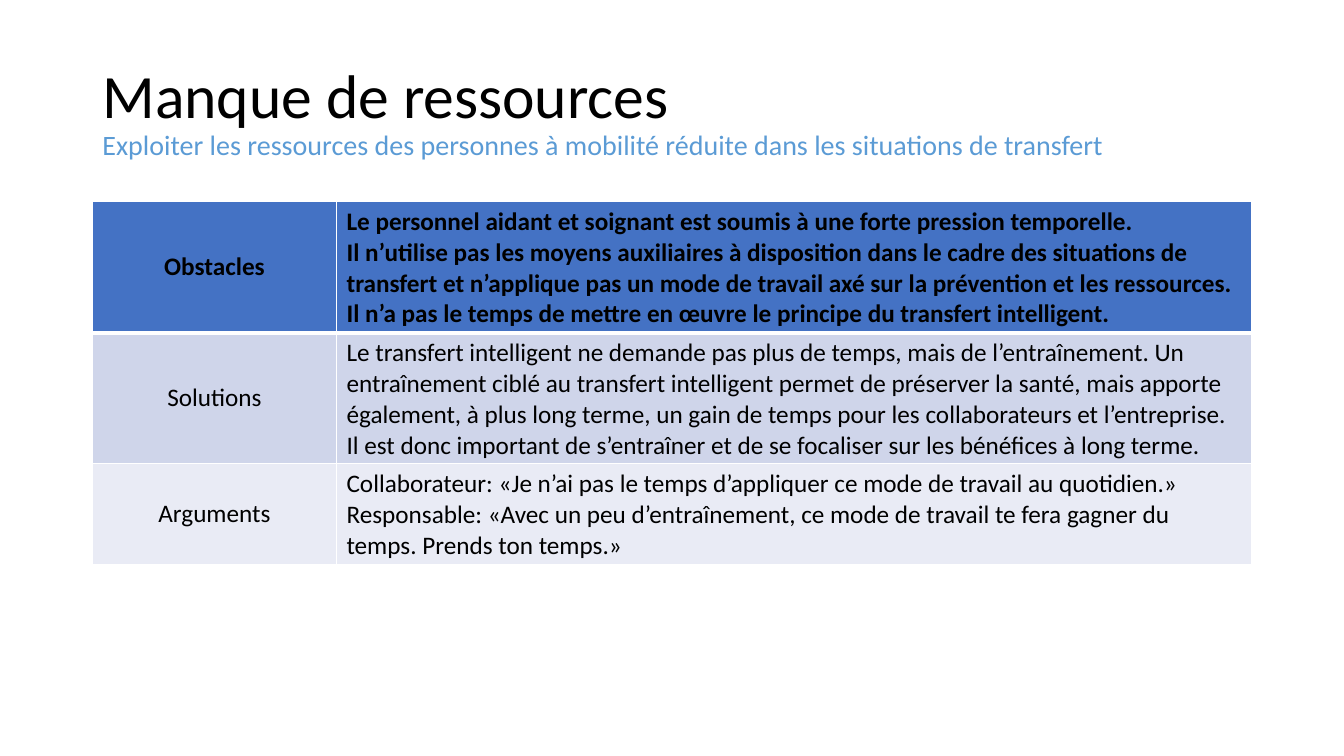
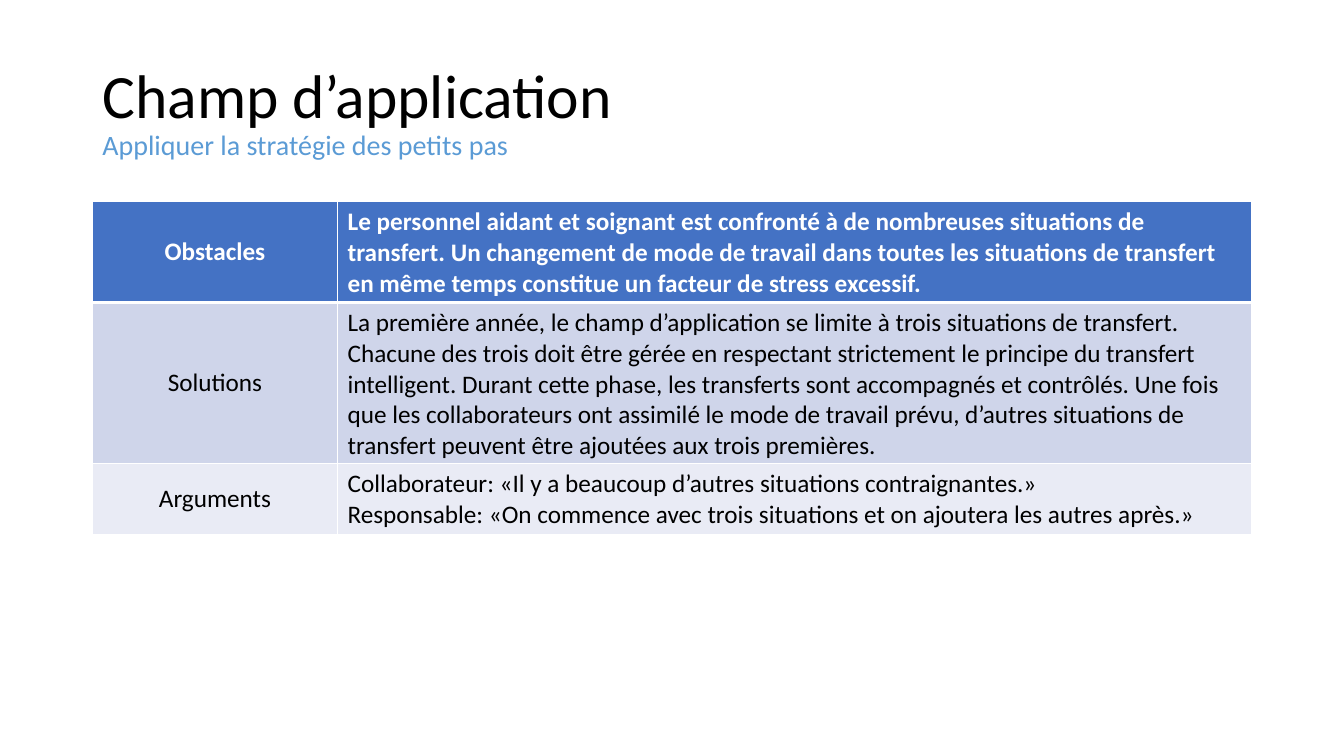
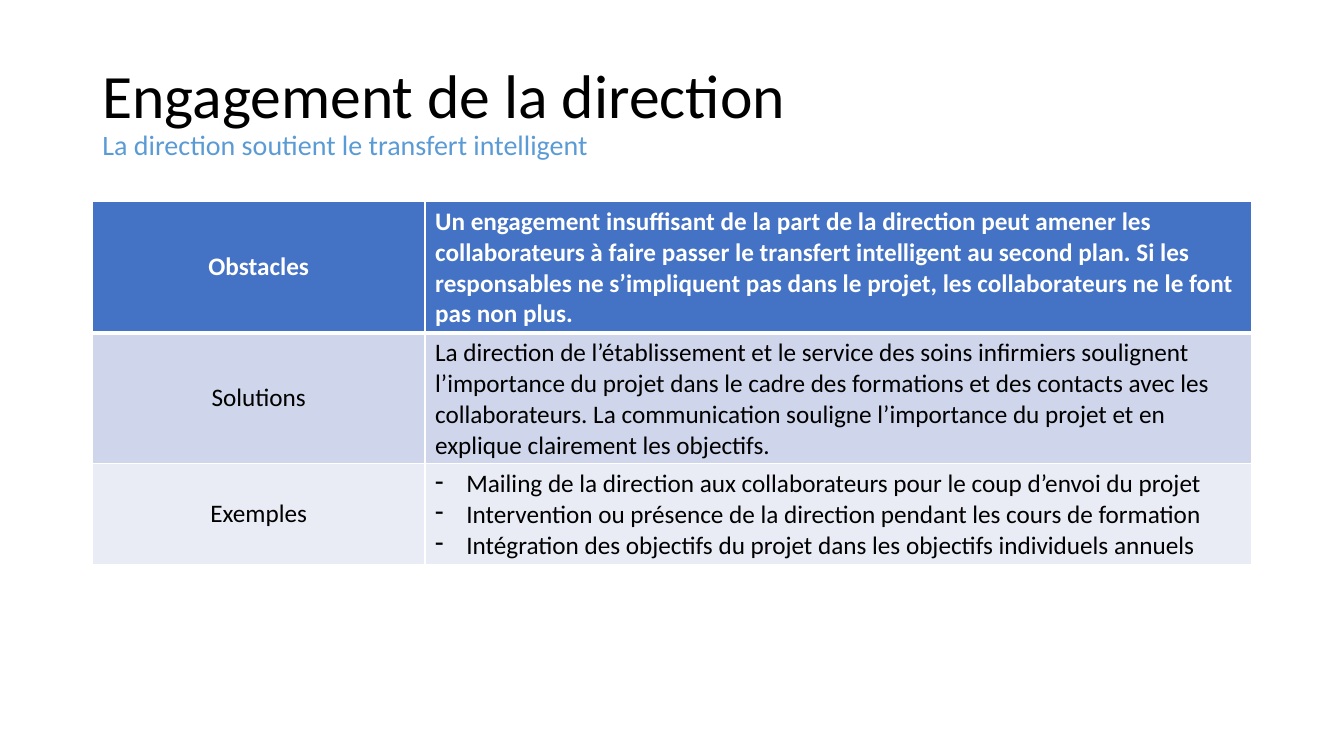
from dataclasses import dataclass

import pptx
import pptx.dml.color
import pptx.enum.text
import pptx.oxml
import pptx.oxml.ns
import pptx.slide
import pptx.table
import pptx.text.text
import pptx.util

RGBColor = pptx.dml.color.RGBColor
BLACK = RGBColor(0x00, 0x00, 0x00)
WHITE = RGBColor(0xFF, 0xFF, 0xFF)
SUBTITLE_BLUE = RGBColor(0x5B, 0x9B, 0xD5)
ROW_FILLS = (
    RGBColor(0x44, 0x72, 0xC4),
    RGBColor(0xCF, 0xD5, 0xEA),
    RGBColor(0xE9, 0xEB, 0xF5),
)
FONT = "Calibri"

SLIDE_WIDTH = pptx.util.Inches(13.33)
SLIDE_HEIGHT = pptx.util.Inches(7.5)

# Percentages of the slide's width or height
CONTENT_LEFT = 6.88
CONTENT_WIDTH = 86.25
TITLE_TOP = 5.33
TITLE_HEIGHT = 19.33
TABLE_TOP = 26.67
ROW_HEIGHT = 5.47

THIN, THICK = pptx.util.Pt(1), pptx.util.Pt(3)
BULLET_INDENT = pptx.util.Inches(0.31)


@dataclass(frozen=True)
class Row:
    label: str
    paragraphs: tuple[str, ...]
    bulleted: bool = False


@dataclass(frozen=True)
class Topic:
    title: str
    subtitle: str
    label_width: float
    rows: tuple[Row, ...]
    header_color: RGBColor = WHITE


TOPICS = (
    Topic(
        "Manque de ressources",
        "Exploiter les ressources des personnes à mobilité réduite dans les situations de transfert",
        18.16,
        (
            Row("Obstacles", (
                "Le personnel aidant et soignant est soumis à une forte pression temporelle.\n"
                "Il n’utilise pas les moyens auxiliaires à disposition dans le cadre des situations de "
                "transfert et n’applique pas un mode de travail axé sur la prévention et les ressources.",
                "Il n’a pas le temps de mettre en œuvre le principe du transfert intelligent.",
            )),
            Row("Solutions", (
                "Le transfert intelligent ne demande pas plus de temps, mais de l’entraînement. Un "
                "entraînement ciblé au transfert intelligent permet de préserver la santé, mais apporte "
                "également, à plus long terme, un gain de temps pour les collaborateurs et l’entreprise.",
                "Il est donc important de s’entraîner et de se focaliser sur les bénéfices à long terme.",
            )),
            Row("Arguments", (
                "Collaborateur: «Je n’ai pas le temps d’appliquer ce mode de travail au quotidien.»",
                "Responsable: «Avec un peu d’entraînement, ce mode de travail te fera gagner du "
                "temps. Prends ton temps.»",
            )),
        ),
        header_color=BLACK,
    ),
    Topic(
        "Champ d’application",
        "Appliquer la stratégie des petits pas",
        18.24,
        (
            Row("Obstacles", (
                "Le personnel aidant et soignant est confronté à de nombreuses situations de "
                "transfert. Un changement de mode de travail dans toutes les situations de transfert "
                "en même temps constitue un facteur de stress excessif.",
            )),
            Row("Solutions", (
                "La première année, le champ d’application se limite à trois situations de transfert. "
                "Chacune des trois doit être gérée en respectant strictement le principe du transfert "
                "intelligent. Durant cette phase, les transferts sont accompagnés et contrôlés. Une fois "
                "que les collaborateurs ont assimilé le mode de travail prévu, d’autres situations de "
                "transfert peuvent être ajoutées aux trois premières.",
            )),
            Row("Arguments", (
                "Collaborateur: «Il y a beaucoup d’autres situations contraignantes.»",
                "Responsable: «On commence avec trois situations et on ajoutera les autres après.»",
            )),
        ),
    ),
    Topic(
        "Engagement de la direction",
        "La direction soutient le transfert intelligent",
        24.75,
        (
            Row("Obstacles", (
                "Un engagement insuffisant de la part de la direction peut amener les "
                "collaborateurs à faire passer le transfert intelligent au second plan. Si les "
                "responsables ne s’impliquent pas dans le projet, les collaborateurs ne le font "
                "pas non plus.",
            )),
            Row("Solutions", (
                "La direction de l’établissement et le service des soins infirmiers soulignent "
                "l’importance du projet dans le cadre des formations et des contacts avec les "
                "collaborateurs. La communication souligne l’importance du projet et en "
                "explique clairement les objectifs.",
            )),
            Row("Exemples", (
                "Mailing de la direction aux collaborateurs pour le coup d’envoi du projet",
                "Intervention ou présence de la direction pendant les cours de formation",
                "Intégration des objectifs du projet dans les objectifs individuels annuels",
            ), bulleted=True),
        ),
    ),
)


def across(percent: float) -> int:
    return round(SLIDE_WIDTH * percent / 100)


def down(percent: float) -> int:
    return round(SLIDE_HEIGHT * percent / 100)


def add_title(slide: pptx.slide.Slide, topic: Topic) -> None:
    frame = slide.shapes.add_textbox(
        across(CONTENT_LEFT), down(TITLE_TOP), across(CONTENT_WIDTH), down(TITLE_HEIGHT)
    ).text_frame
    frame.word_wrap = True
    frame.vertical_anchor = pptx.enum.text.MSO_ANCHOR.MIDDLE
    heading = frame.paragraphs[0]
    heading.line_spacing = 0.9
    heading.font.name = FONT
    for text, size, color in ((topic.title, 44, BLACK), (topic.subtitle, 20, SUBTITLE_BLUE)):
        if heading.runs:
            heading.add_line_break()
        run = heading.add_run()
        run.text = text
        run.font.size = pptx.util.Pt(size)
        run.font.color.rgb = color


def set_borders(cell: pptx.table._Cell, top: int, bottom: int) -> None:
    properties = cell._tc.get_or_add_tcPr()
    for side, width in (("L", THIN), ("R", THIN), ("T", top), ("B", bottom)):
        properties.append(pptx.oxml.parse_xml(
            f'<a:ln{side} {pptx.oxml.ns.nsdecls("a")} w="{int(width)}">'
            f'<a:solidFill><a:srgbClr val="{WHITE}"/></a:solidFill></a:ln{side}>'
        ))


def add_bullet(paragraph: pptx.text.text._Paragraph) -> None:
    properties = paragraph._p.get_or_add_pPr()
    properties.set("marL", str(int(BULLET_INDENT)))
    properties.set("indent", str(-int(BULLET_INDENT)))
    properties.insert(0, pptx.oxml.parse_xml(
        f'<a:buChar {pptx.oxml.ns.nsdecls("a")} char="-"/>'
    ))


def write_cell(cell: pptx.table._Cell, texts: tuple[str, ...], color: RGBColor, bold: bool) -> None:
    cell.vertical_anchor = pptx.enum.text.MSO_ANCHOR.MIDDLE
    frame = cell.text_frame
    for index, text in enumerate(texts):
        paragraph = frame.add_paragraph() if index else frame.paragraphs[0]
        paragraph.text = text
        paragraph.font.name = FONT
        paragraph.font.size = pptx.util.Pt(18)
        paragraph.font.bold = bold
        paragraph.font.color.rgb = color


def add_topic_table(slide: pptx.slide.Slide, topic: Topic) -> None:
    table = slide.shapes.add_table(
        len(topic.rows), 2, across(CONTENT_LEFT), down(TABLE_TOP),
        across(CONTENT_WIDTH), down(ROW_HEIGHT * len(topic.rows)),
    ).table
    table.columns[0].width = across(topic.label_width)
    table.columns[1].width = across(CONTENT_WIDTH - topic.label_width)
    for index, (row, fill) in enumerate(zip(topic.rows, ROW_FILLS)):
        is_header = index == 0
        label, content = table.cell(index, 0), table.cell(index, 1)
        for cell, texts in ((label, (row.label,)), (content, row.paragraphs)):
            set_borders(cell, THICK if index == 1 else THIN, THICK if is_header else THIN)
            cell.fill.solid()
            cell.fill.fore_color.rgb = fill
            write_cell(cell, texts, topic.header_color if is_header else BLACK, is_header)
        label.text_frame.paragraphs[0].alignment = pptx.enum.text.PP_ALIGN.CENTER
        if row.bulleted:
            for paragraph in content.text_frame.paragraphs:
                add_bullet(paragraph)


def main() -> None:
    presentation = pptx.Presentation()
    presentation.slide_width = SLIDE_WIDTH
    presentation.slide_height = SLIDE_HEIGHT
    blank_layout = presentation.slide_layouts[6]
    for topic in TOPICS:
        slide = presentation.slides.add_slide(blank_layout)
        add_title(slide, topic)
        add_topic_table(slide, topic)
    presentation.save("out.pptx")


if __name__ == "__main__":
    main()
